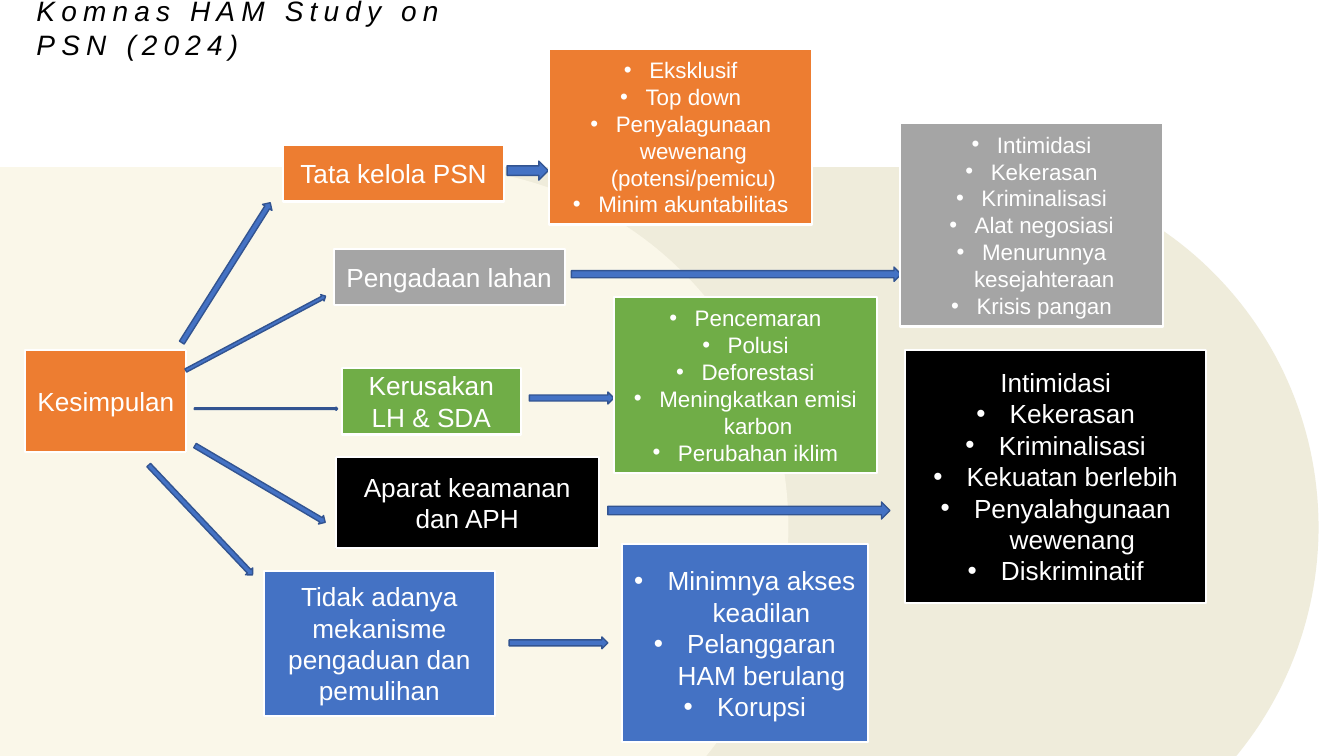
import math

import pptx
import pptx.dml.color
import pptx.enum.shapes
import pptx.enum.text
import pptx.oxml.ns
import pptx.util
from lxml import etree

Cm = pptx.util.Cm
Pt = pptx.util.Pt
SHAPE = pptx.enum.shapes.MSO_SHAPE

COLORS = {
    "sand": "EFECDB", "cream": "FAF7E9", "white": "FFFFFF", "black": "000000",
    "orange": "ED7D31", "gray": "A5A5A5", "green": "70AD47",
    "blue": "4472C4", "navy": "325491",
}
FONT = "Arial"

PANELS = [((0, 4.21, 33.23, 15.14), "sand"), ((0, 4.21, 19.87, 15.14), "cream")]

CAUSES = [
    ((0.64, 8.81, 4.06, 2.59), "orange", "Kesimpulan"),
    ((7.14, 3.66, 5.56, 1.42), "orange", "Tata kelola PSN"),
    ((8.41, 6.27, 5.82, 1.42), "gray", "Pengadaan lahan"),
    ((8.61, 9.27, 4.52, 1.68), "green", "Kerusakan LH & SDA"),
    ((8.46, 11.51, 6.63, 2.31), "black", "Aparat keamanan dan APH"),
    ((6.65, 14.38, 5.82, 3.66), "blue",
     "Tidak adanya mekanisme pengaduan dan pemulihan"),
]

ARROWS = [
    ((3.61, 6.73, 4.17, 0.28), 302.3),
    ((4.45, 8.31, 3.99, 0.18), 332),
    ((4.9, 10.26, 3.61, 0.08), 0),
    ((4.65, 12.07, 3.81, 0.25), 30.5),
    ((3.15, 12.98, 3.81, 0.25), 46.6),
    ((12.78, 4.06, 1.04, 0.48), 0),
    ((14.4, 6.73, 8.31, 0.36), 0),
    ((13.34, 9.88, 2.13, 0.3), 0),
    ((15.32, 12.65, 7.11, 0.43), 0),
    ((12.83, 16.05, 2.49, 0.3), 0),
]

EFFECTS = [
    ((13.84, 1.24, 6.63, 4.42), "orange", 16, 0,
     ["Eksklusif", "Top down", "Penyalagunaan wewenang (potensi/pemicu)",
      "Minim akuntabilitas"]),
    ((22.68, 3.1, 6.63, 5.13), "gray", 16, 0,
     ["Intimidasi", "Kekerasan", "Kriminalisasi", "Alat negosiasi",
      "Menurunnya kesejahteraan", "Krisis pangan"]),
    ((15.47, 7.49, 6.63, 4.42), "green", 16, 0,
     ["Pencemaran", "Polusi", "Deforestasi", "Meningkatkan emisi karbon",
      "Perubahan iklim"]),
    ((22.81, 8.81, 7.59, 6.38), "black", 18.7, 1,
     ["Intimidasi", "Kekerasan", "Kriminalisasi", "Kekuatan berlebih",
      "Penyalahgunaan wewenang", "Diskriminatif"]),
    ((15.67, 13.72, 6.2, 4.98), "blue", 18.7, 0,
     ["Minimnya akses keadilan", "Pelanggaran HAM berulang", "Korupsi"]),
]


def rgb(name):
    """Return the named colour."""
    return pptx.dml.color.RGBColor.from_string(COLORS[name])


def paint(sp, fill, line=None, width=1):
    """Give a shape a flat fill and an optional outline."""
    sp.shadow.inherit = False
    sp.fill.solid()
    sp.fill.fore_color.rgb = rgb(fill)
    if line:
        sp.line.color.rgb = rgb(line)
        sp.line.width = Pt(width)
    else:
        sp.line.fill.background()


def add_panel(slide, box, fill, radius=9.07, steps=90):
    """Draw a band whose right end is a circle cut off at the bottom."""
    left, top, width, height = box
    cx, cy = left + width - radius, top + radius
    end = math.asin((height - radius) / radius)
    angles = [-math.pi / 2 + (end + math.pi / 2) * i / steps for i in range(steps + 1)]
    arc = [(Cm(cx + radius * math.cos(a)), Cm(cy + radius * math.sin(a))) for a in angles]
    builder = slide.shapes.build_freeform(Cm(left), Cm(top))
    builder.add_line_segments(arc + [(Cm(left), Cm(top + height))])
    paint(builder.convert_to_shape(), fill)


def add_title(slide, box):
    """Write the spaced italic title."""
    tf = slide.shapes.add_textbox(*map(Cm, box)).text_frame
    tf.word_wrap = True
    tf.vertical_anchor = pptx.enum.text.MSO_ANCHOR.MIDDLE
    tf.margin_left = Cm(0.56)
    tf.margin_top = tf.margin_right = tf.margin_bottom = 0
    tf.text = "Komnas HAM Study on PSN (2024)"
    r = tf.paragraphs[0].runs[0]
    r.font.name, r.font.size, r.font.italic = FONT, Pt(20), True
    r.font.color.rgb = rgb("black")
    r.font._element.set("spc", "440")


def add_bullet(p, indent):
    """Give a paragraph a round bullet with a hanging indent."""
    pPr = p._p.get_or_add_pPr()
    pPr.set("marL", str(Cm(indent)))
    pPr.set("indent", str(-Cm(indent)))
    font = etree.SubElement(pPr, pptx.oxml.ns.qn("a:buFont"))
    font.set("typeface", FONT)
    etree.SubElement(pPr, pptx.oxml.ns.qn("a:buChar")).set("char", "•")


def add_card(slide, box, fill, lines, size=18.7, plain=1):
    """Draw a white-edged card; lines after the plain ones get bullets."""
    sp = slide.shapes.add_shape(SHAPE.RECTANGLE, *map(Cm, box))
    paint(sp, fill, "white", 1.5)
    tf = sp.text_frame
    tf.word_wrap = True
    tf.vertical_anchor = pptx.enum.text.MSO_ANCHOR.MIDDLE
    tf.text = "\n".join(lines)
    for i, p in enumerate(tf.paragraphs):
        p.alignment = pptx.enum.text.PP_ALIGN.CENTER
        if i >= plain:
            add_bullet(p, 0.64 if size == 16 else 0.84)
        for r in p.runs:
            r.font.name, r.font.size = FONT, Pt(size)
            r.font.color.rgb = rgb("white")


def add_arrow(slide, box, rotation):
    """Draw a block arrow turned by the given degrees."""
    sp = slide.shapes.add_shape(SHAPE.RIGHT_ARROW, *map(Cm, box))
    sp.rotation = rotation
    paint(sp, "blue", "navy")


def main():
    """Build the slide and save it."""
    prs = pptx.Presentation()
    prs.slide_width, prs.slide_height = Cm(33.87), Cm(19.05)
    slide = prs.slides.add_slide(prs.slide_layouts[6])
    for box, fill in PANELS:
        add_panel(slide, box, fill)
    add_title(slide, (0.36, -0.18, 12.14, 1.73))
    for box, fill, label in CAUSES:
        add_card(slide, box, fill, [label])
    for box, rotation in ARROWS:
        add_arrow(slide, box, rotation)
    for box, fill, size, plain, lines in EFFECTS:
        add_card(slide, box, fill, lines, size, plain)
    prs.save("out.pptx")


if __name__ == "__main__":
    main()
